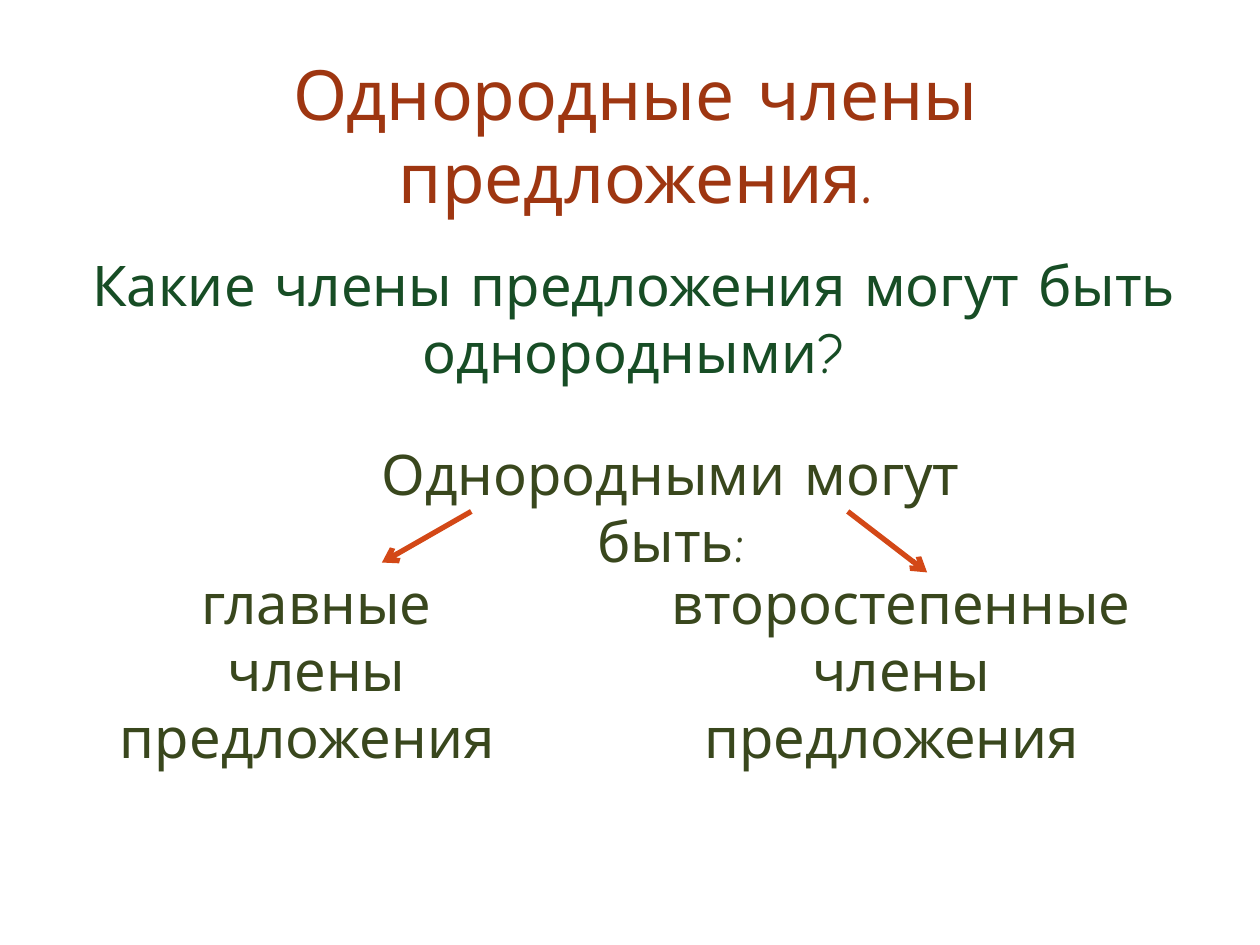
from dataclasses import dataclass

from lxml.etree import SubElement
from pptx import Presentation
from pptx.dml.color import RGBColor
from pptx.enum.shapes import MSO_CONNECTOR
from pptx.enum.text import MSO_ANCHOR, MSO_AUTO_SIZE, PP_ALIGN
from pptx.oxml.ns import qn
from pptx.util import Cm, Pt


@dataclass(frozen=True)
class Theme:
    font: str = "Comic Neue"
    title: str = "9E3611"
    question: str = "174D25"
    body: str = "39471D"
    arrow: str = "D34817"
    title_size: float = 39.6
    body_size: float = 32
    arrow_width: float = 3


THEME = Theme()


def add_text(s, text, box, color=THEME.body, size=THEME.body_size,
             anchor=MSO_ANCHOR.TOP, grow=True):
    """Place centred text, one paragraph per line, in box (x, y, w, h) in cm."""
    tf = s.shapes.add_textbox(*map(Cm, box)).text_frame
    tf.word_wrap = True
    tf.auto_size = MSO_AUTO_SIZE.SHAPE_TO_FIT_TEXT if grow else MSO_AUTO_SIZE.NONE
    tf.vertical_anchor = anchor
    for i, line in enumerate(text.split("\n")):
        p = tf.paragraphs[0] if i == 0 else tf.add_paragraph()
        p.alignment = PP_ALIGN.CENTER
        r = p.add_run()
        r.text = line
        r.font.name = THEME.font
        r.font.size = Pt(size)
        r.font.color.rgb = RGBColor.from_string(color)


def add_arrow(s, start, end):
    c = s.shapes.add_connector(MSO_CONNECTOR.STRAIGHT, *map(Cm, start + end))
    c.line.color.rgb = RGBColor.from_string(THEME.arrow)
    c.line.width = Pt(THEME.arrow_width)
    SubElement(c.line._get_or_add_ln(), qn("a:tailEnd"), type="arrow")
    SubElement(c._element.spPr, qn("a:effectLst"))


def add_heading(s, x, y):
    """Title with the question under it."""
    add_text(s, "Однородные члены предложения.", (x, y, 24.21, 3.18),
             color=THEME.title, size=THEME.title_size,
             anchor=MSO_ANCHOR.MIDDLE, grow=False)
    add_text(s, "Какие члены предложения могут быть однородными?",
             (x + 0.38, y + 3.81, 23.39, 3), color=THEME.question)


def add_scheme(s, x, y):
    """Statement that branches into two kinds of sentence members."""
    add_text(s, "Однородными могут быть:", (x + 3.99, y, 15.27, 1.63))

    # Branches: text, left, width, arrow start and end
    branches = [
        ("главные члены", 0, 8.97, (7.6, 1.57), (5.8, 2.6)),
        ("второстепенные члены", 9.6, 13.34, (15.19, 1.57), (16.79, 2.8)),
    ]
    for text, left, width, (x1, y1), (x2, y2) in branches:
        add_text(s, text + "\nпредложения ", (x + left, y + 2.59, width, 3))
        add_arrow(s, (x + x1, y + y1), (x + x2, y + y2))


def main():
    prs = Presentation()
    prs.slide_width, prs.slide_height = Cm(25.4), Cm(19.05)
    s = prs.slides.add_slide(prs.slide_layouts[6])
    add_heading(s, 0.71, 1.12)
    add_scheme(s, 1.9, 8.74)
    prs.save("out.pptx")


if __name__ == "__main__":
    main()
